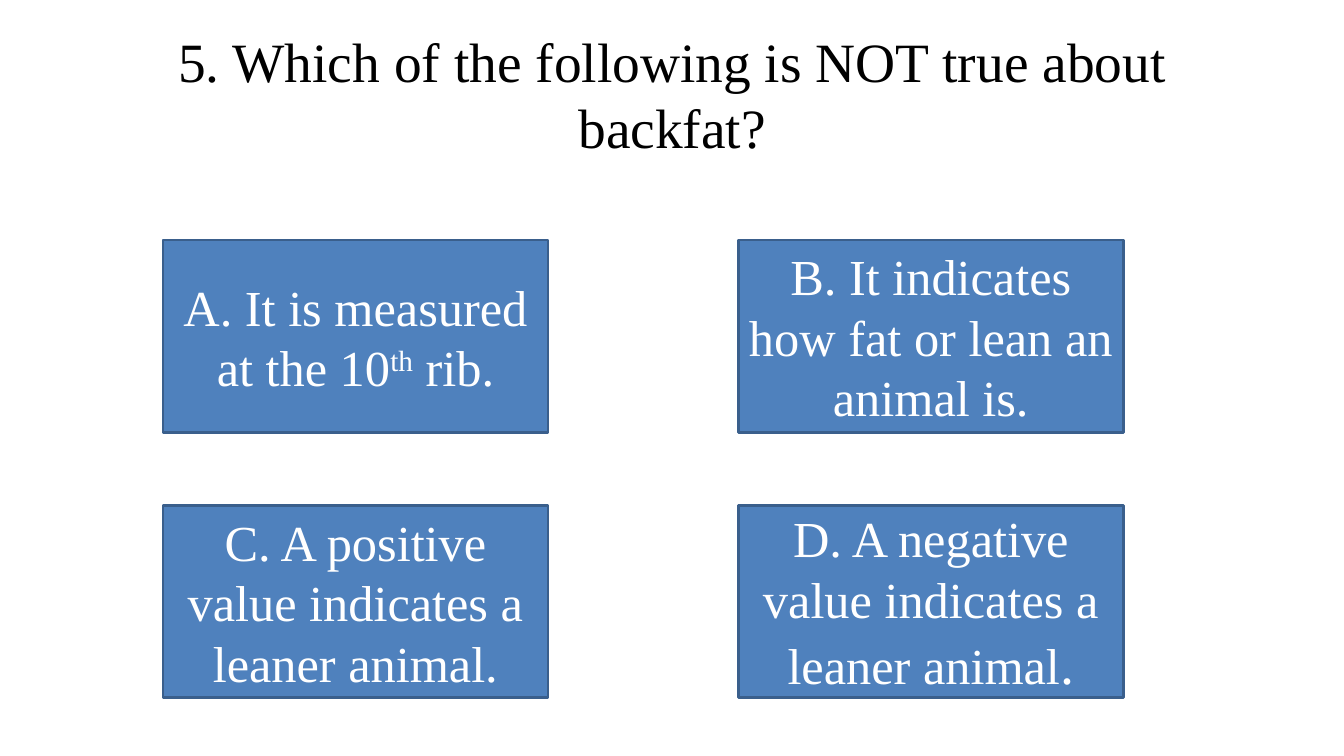
from dataclasses import dataclass

from pptx import Presentation
from pptx.dml.color import RGBColor
from pptx.enum.shapes import MSO_SHAPE as Preset
from pptx.enum.text import MSO_ANCHOR as Anchor, PP_ALIGN as Align
from pptx.shapes.autoshape import Shape
from pptx.slide import Slide
from pptx.util import Cm, Pt


@dataclass(frozen=True)
class Theme:
    font: str = "Times New Roman"
    question_color: RGBColor = RGBColor(0x00, 0x00, 0x00)
    answer_color: RGBColor = RGBColor(0xFF, 0xFF, 0xFF)
    box_fill: RGBColor = RGBColor(0x4F, 0x81, 0xBD)
    box_line: RGBColor = RGBColor(0x3A, 0x5F, 0x8C)
    box_line_width: float = 2
    question_size: float = 39.6
    answer_size: float = 36
    period_size: float = 40


@dataclass(frozen=True)
class Piece:
    text: str
    size: float
    color: RGBColor
    superscript: bool = False


@dataclass(frozen=True)
class Answer:
    column: int
    row: int
    pieces: tuple[Piece, ...]


THEME = Theme()
SLIDE_WIDTH, SLIDE_HEIGHT = 33.87, 19.05
GRID_LEFT, GRID_TOP = 4.11, 6.05
COLUMN_STEP, ROW_STEP = 14.5, 6.68
BOX_WIDTH, BOX_HEIGHT = 9.7, 4.85


def answer_piece(text: str, size: float = THEME.answer_size,
                 superscript: bool = False) -> Piece:
    return Piece(text, size, THEME.answer_color, superscript)


QUESTION = Piece("5. Which of the following is NOT true about backfat?",
                 THEME.question_size, THEME.question_color)
ANSWERS = (
    Answer(0, 0, (answer_piece("A. It is measured at the 10"),
                  answer_piece("th", superscript=True),
                  answer_piece(" rib."))),
    Answer(1, 0, (answer_piece("B. It indicates how fat or lean an animal is."),)),
    Answer(0, 1, (answer_piece("C. A positive value indicates a leaner animal."),)),
    Answer(1, 1, (answer_piece("D. A negative value indicates a leaner animal"),
                  answer_piece(".", THEME.period_size))),
)


def write_centred(shape: Shape, pieces: tuple[Piece, ...]) -> None:
    frame = shape.text_frame
    frame_format = {"word_wrap": True, "vertical_anchor": Anchor.MIDDLE}
    for name, value in frame_format.items():
        setattr(frame, name, value)
    paragraph = frame.paragraphs[0]
    paragraph.alignment = Align.CENTER
    for piece in pieces:
        run = paragraph.add_run()
        run.text = piece.text
        for name, value in {"name": THEME.font, "size": Pt(piece.size)}.items():
            setattr(run.font, name, value)
        run.font.color.rgb = piece.color
        if piece.superscript:
            run._r.get_or_add_rPr().set("baseline", "30000")


def add_question(slide: Slide) -> None:
    question = slide.shapes.add_textbox(Cm(1.7), Cm(0.76), Cm(30.48), Cm(3.18))
    for side in ("margin_left", "margin_right"):
        setattr(question.text_frame, side, Cm(0.3))
    write_centred(question, (QUESTION,))


def add_answer(slide: Slide, answer: Answer) -> None:
    box = slide.shapes.add_shape(
        Preset.RECTANGLE,
        Cm(GRID_LEFT + answer.column * COLUMN_STEP),
        Cm(GRID_TOP + answer.row * ROW_STEP),
        Cm(BOX_WIDTH), Cm(BOX_HEIGHT))
    box.shadow.inherit = False
    box.fill.solid()
    box.fill.fore_color.rgb = THEME.box_fill
    box.line.color.rgb = THEME.box_line
    box.line.width = Pt(THEME.box_line_width)
    write_centred(box, answer.pieces)


def main() -> None:
    deck = Presentation()
    deck.slide_width, deck.slide_height = Cm(SLIDE_WIDTH), Cm(SLIDE_HEIGHT)
    slide = deck.slides.add_slide(deck.slide_layouts[6])
    add_question(slide)
    for answer in ANSWERS:
        add_answer(slide, answer)
    deck.save("out.pptx")


if __name__ == "__main__":
    main()
